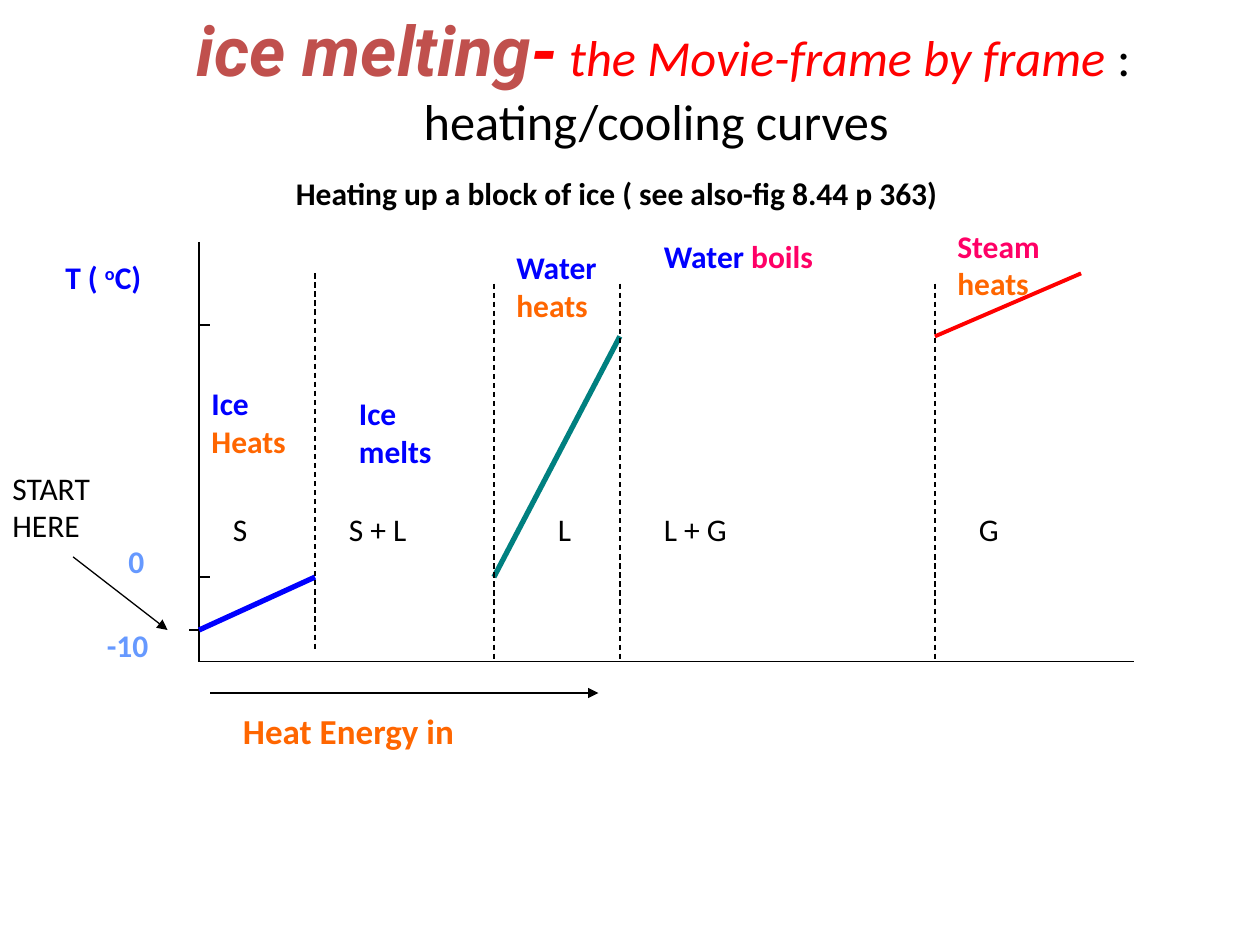
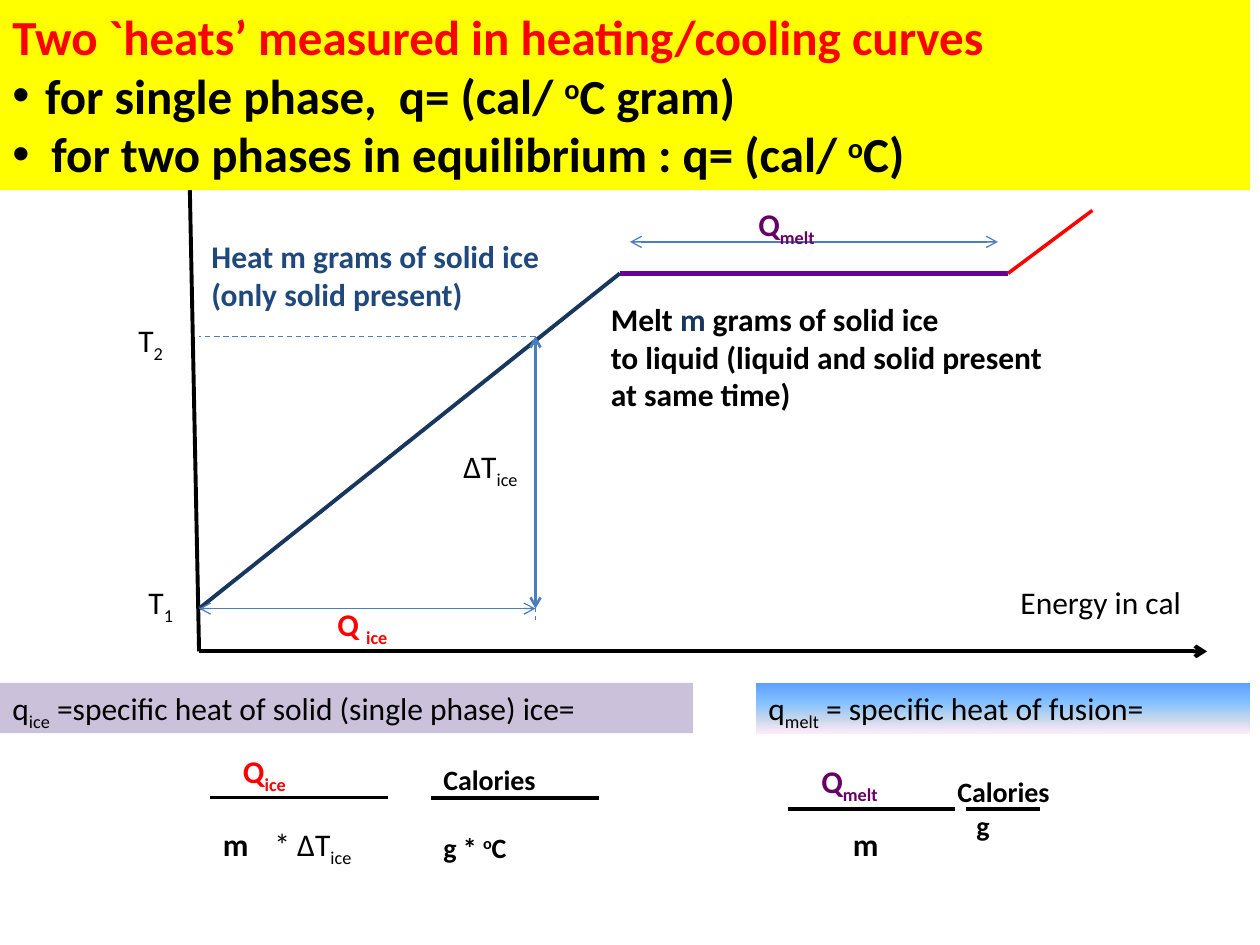
"""Build two slides on the heating curve of ice and its heats."""
from dataclasses import dataclass
from typing import Any

import lxml.etree
import pptx
import pptx.dml.color
import pptx.enum.dml
import pptx.enum.shapes
import pptx.enum.text
import pptx.oxml.ns
import pptx.util

HUES = {
    "black": "000000", "white": "FFFFFF", "red": "FF0000", "brick": "C0504D",
    "blue": "0000FF", "teal": "008080", "orange": "FF6600", "pink": "FF0066",
    "sky": "6699FF", "navy": "17375E", "ink": "1F497D", "steel": "4B7EBC",
    "violet": "660099", "plum": "660066", "yellow": "FFFF00", "lilac": "CCC1DA",
}
FADE = ((0, "5E9EFF"), (40, "85C2FF"), (70, "C4D6EB"), (100, "FFEBFA"))
SHIFT = {"_": -25, "^": 30}

Box = tuple[float, float, float, float]
Row = str | list[tuple[str, str]]


@dataclass(frozen=True)
class Label:
    """Text at a spot; a bar splits runs, _ lowers one and ^ lifts one."""
    box: Box
    rows: list[Row]
    hue: str = "black"
    bold: bool = False
    size: float = 18


@dataclass(frozen=True)
class Line:
    """A straight line with optional dash and arrow ends."""
    start: tuple[float, float]
    end: tuple[float, float]
    hue: str = "black"
    width: float = 0.75
    dash: bool = False
    head: str = ""
    tail: str = ""


@dataclass(frozen=True)
class Band:
    """A filled bar with rows of text."""
    box: Box
    fill: str
    rows: list[Row]


def tint(hue: str) -> pptx.dml.color.RGBColor:
    """Give the colour that a name stands for."""
    return pptx.dml.color.RGBColor.from_string(HUES[hue])


def node(root: Any, tag: str, **attrs: str) -> Any:
    """Add a drawing element below root."""
    return lxml.etree.SubElement(root, pptx.oxml.ns.qn(tag), **attrs)


def place(box: Box) -> list[int]:
    """Turn inches into lengths."""
    return [pptx.util.Inches(side) for side in box]


def write(para: Any, text: str, *, size: float = 18, hue: str = "black",
          bold: bool = False, slant: bool = False, font: str = "Calibri") -> None:
    """Add text to a paragraph, with its raised and lowered parts."""
    for piece in text.split("|"):
        base = SHIFT.get(piece[:1], 0)
        run = para.add_run()
        run.text = piece[1:] if base else piece
        run.font.name = font
        run.font.size = pptx.util.Pt(size)
        run.font.bold = bold
        run.font.italic = slant
        run.font.color.rgb = tint(hue)
        if base:
            run.font._element.set("baseline", str(base * 1000))


def fill_rows(frame: Any, rows: list[Row], hue: str = "black",
              bold: bool = False, size: float = 18) -> None:
    """Write one paragraph for each row."""
    frame.word_wrap = True
    for spot, row in enumerate(rows):
        para = frame.add_paragraph() if spot else frame.paragraphs[0]
        para.alignment = pptx.enum.text.PP_ALIGN.LEFT
        for text, shade in [(row, hue)] if isinstance(row, str) else row:
            write(para, text, hue=shade, bold=bold, size=size)


def add_label(slide: Any, item: Label) -> None:
    """Draw a text label."""
    frame = slide.shapes.add_textbox(*place(item.box)).text_frame
    fill_rows(frame, item.rows, item.hue, item.bold, item.size)


def add_line(slide: Any, item: Line) -> None:
    """Draw a line or arrow."""
    link = slide.shapes.add_connector(
        pptx.enum.shapes.MSO_CONNECTOR.STRAIGHT, *place(item.start + item.end))
    link.line.color.rgb = tint(item.hue)
    link.line.width = pptx.util.Pt(item.width)
    if item.dash:
        link.line.dash_style = pptx.enum.dml.MSO_LINE.DASH
    props = link._element.spPr
    stroke = props.find(pptx.oxml.ns.qn("a:ln"))
    for tag, kind in (("a:headEnd", item.head), ("a:tailEnd", item.tail)):
        if kind:
            node(stroke, tag, type=kind)
    node(props, "a:effectLst")


def add_band(slide: Any, item: Band) -> Any:
    """Draw a bar and give back its shape."""
    shape = slide.shapes.add_shape(
        pptx.enum.shapes.MSO_SHAPE.RECTANGLE, *place(item.box))
    shape.shadow.inherit = False
    shape.line.fill.background()
    if item.fill == "fade":
        shape.fill.gradient()
        shape.fill.gradient_angle = 270
        stops = shape._element.spPr.find(".//" + pptx.oxml.ns.qn("a:gsLst"))
        for old in list(stops):
            stops.remove(old)
        for part, code in FADE:
            stop = node(stops, "a:gs", pos=str(part * 1000))
            node(stop, "a:srgbClr", val=code)
    else:
        shape.fill.solid()
        shape.fill.fore_color.rgb = tint(item.fill)
    shape.text_frame.vertical_anchor = pptx.enum.text.MSO_ANCHOR.TOP
    fill_rows(shape.text_frame, item.rows)
    return shape


def dot(para: Any, gap: float) -> None:
    """Put a small bullet before a paragraph."""
    props = para._p.get_or_add_pPr()
    room = pptx.util.Inches(gap)
    props.set("marL", str(room))
    props.set("indent", str(-room))
    node(props, "a:buSzPts", val="1800")
    node(props, "a:buFont", typeface="Arial")
    node(props, "a:buChar", char="•")


def add_page(deck: Any, lines: list[Line], bands: list[Band],
             labels: list[Label]) -> Any:
    """Add a white slide with lines, bands and labels in that order."""
    slide = deck.slides.add_slide(deck.slide_layouts[6])
    slide.background.fill.solid()
    slide.background.fill.fore_color.rgb = tint("white")
    for line in lines:
        add_line(slide, line)
    for band in bands:
        add_band(slide, band)
    for label in labels:
        add_label(slide, label)
    return slide


def add_curve(deck: Any) -> None:
    """Build the slide with the heating curve."""
    left, floor, ice, boil = 1.58, 5.25, 4.58, 2.67
    lines = [
        Line((left, 1.92), (left, floor)),
        Line((left, floor), (9, floor)),
        Line((left, 5), (2.5, ice), "blue", 3),
        Line((3.92, ice), (4.92, boil), "teal", 3),
        Line((7.42, boil), (8.58, 2.17), "red", 2.25),
        Line((1.67, 5.5), (4.75, 5.5), tail="triangle"),
        Line((0.58, 4.42), (1.33, 5), tail="triangle"),
        Line((left, 5), (1.5, 5)),
        Line((2.5, 2.17), (2.5, 5.17), dash=True),
    ]
    lines += [Line((left, y), (1.67, y)) for y in (ice, 2.58)]
    lines += [Line((x, 2.25), (x, floor), dash=True) for x in (3.92, 4.92, 7.42)]
    labels = [
        Label((0.42, 2, 1.08, 0.4), ["T ( |^o|C)"], "blue", True),
        Label((1.83, 5.58, 3.25, 0.43), ["Heat Energy in"], "orange", True, 20),
        Label((0.75, 4.92, 0.67, 0.4), ["-10"], "sky", True),
        Label((0.92, 4.25, 0.58, 0.4), ["0"], "sky", True),
        Label((2.25, 1.33, 6.33, 0.4),
              ["Heating up a block of ice ( see also-fig 8.44 p 363)"], bold=True),
        Label((0, 3.67, 1.08, 0.7), ["START", "HERE"]),
        Label((1.58, 3, 1, 0.7), ["Ice", [("Heats", "orange")]], "blue", True),
        Label((2.75, 3.08, 1.08, 0.7), ["Ice melts"], "blue", True),
        Label((4, 1.92, 1.17, 0.7),
              [[("Water ", "blue"), ("heats", "orange")]], bold=True),
        Label((5.17, 1.83, 1.75, 0.4),
              [[("Water ", "blue"), ("boils", "pink")]], bold=True),
        Label((7.5, 1.75, 1.33, 0.7),
              [[("Steam ", "pink"), ("heats", "orange")]], bold=True),
    ]
    phases = ((1.75, "S"), (2.67, "S + L"), (4.33, "L"), (5.17, "L + G"), (7.67, "G"))
    labels += [Label((x, 4, 1, 0.4), [name]) for x, name in phases]
    slide = add_page(deck, lines, [], labels)

    frame = slide.shapes.add_textbox(*place((0.42, 0, 9.58, 1.25))).text_frame
    frame.word_wrap = True
    frame.vertical_anchor = pptx.enum.text.MSO_ANCHOR.MIDDLE
    title = frame.paragraphs[0]
    title.alignment = pptx.enum.text.PP_ALIGN.CENTER
    loud = {"font": "Roboto", "bold": True, "slant": True}
    write(title, " ", size=32.4, hue="brick", **loud)
    write(title, "ice melting", size=39.6, hue="brick", **loud)
    write(title, "-", size=39.6, hue="red", **loud)
    write(title, " the Movie-frame by frame ", size=28.8, hue="red", slant=True)
    write(title, ": heating/cooling curves", size=28.8)


def add_heats(deck: Any) -> None:
    """Build the slide with the two measured heats."""
    left, floor, low, high, mid, top = 1.58, 5.17, 4.83, 2.67, 4.25, 2.17
    both = {"head": "arrow", "tail": "arrow"}
    lines = [
        Line((1.5, 1.17), (left, floor), width=2.25),
        Line((left, floor), (9.58, floor), width=2.25, tail="arrow"),
        Line((left, low), (4.92, top), "navy", 2.25),
        Line((mid, high), (mid, 4.92), "steel", dash=True),
        Line((mid, high), (left, high), "steel", dash=True),
        Line((mid, low), (left, low), "steel", **both),
        Line((mid, high), (mid, low), "steel", 1.5, **both),
        Line((4.92, top), (8, top), "violet", 2.75),
        Line((5, 1.92), (7.92, 1.92), "steel", **both),
        Line((8, top), (8.67, 1.67), "red", 2),
        Line((1.67, 6.33), (3.08, 6.33), width=1.75),
    ]
    bars = ((3.42, 4.75, 6.33), (6.25, 7.58, 6.42), (7.67, 8.25, 6.42))
    lines += [Line((a, y), (b, y), width=2.25) for a, b, y in bars]
    bands = [
        Band((0, 5.42, 5.5, 0.4), "lilac",
             ["q|_ice| =specific heat of solid (single phase) ice="]),
        Band((6, 5.42, 3.92, 0.4), "fade", ["q|_melt| = specific heat of fusion="]),
    ]
    labels = [
        Label((1.08, 4.58, 0.67, 0.4), ["T|_1"]),
        Label((1, 2.5, 0.67, 0.4), ["T|_2"]),
        Label((left, 1.83, 3.08, 0.71),
              ["Heat m grams of solid ice (only solid present)"], "ink", True),
        Label((2.58, 4.75, 0.83, 0.4), ["Q |_ice"], "red", True),
        Label((8, 4.58, 1.75, 0.4), ["Energy in cal"]),
        Label((3.58, 3.5, 0.75, 0.4), ["ΔT|_ice"]),
        Label((1.83, 5.92, 1.17, 0.4), ["Q|_ice"], "red", True),
        Label((1.67, 6.5, 0.42, 0.4), ["m"], bold=True),
        Label((2.08, 6.5, 1.08, 0.4), ["* ΔT|_ice"]),
        Label((3.42, 6, 1.33, 0.37), ["Calories"], bold=True, size=16),
        Label((3.42, 6.54, 1.33, 0.37), ["g * |^o|C"], bold=True, size=16),
        Label((4.75, 2.33, 4.24, 1.01),
              [[("Melt ", "black"), ("m", "navy"), (" grams of solid ice", "black")],
               "to liquid (liquid and solid present", "at same time)"], bold=True),
        Label((5.92, 1.58, 0.83, 0.4), ["Q|_melt"], "plum", True),
        Label((6.42, 6, 0.83, 0.4), ["Q|_melt"], "plum", True),
        Label((6.67, 6.5, 0.5, 0.4), ["m"], bold=True),
        Label((7.5, 6.1, 1.5, 0.37), ["Calories"], bold=True, size=16),
        Label((7.65, 6.37, 0.5, 0.37), ["g"], bold=True, size=16),
    ]
    slide = add_page(deck, lines, bands, labels)

    banner = add_band(slide, Band((0, 0, 9.92, 1.51), "yellow", []))
    frame = banner.text_frame
    bold = {"size": 28, "bold": True}
    head = frame.paragraphs[0]
    head.alignment = pptx.enum.text.PP_ALIGN.LEFT
    write(head, "Two `heats’ measured in heating/cooling curves", hue="red", **bold)
    for text, gap in (("for single phase,  q= (cal/ |^o|C gram)", 0.26),
                      ("for two phases in equilibrium : q= (cal/ |^o|C)", 0.31)):
        para = frame.add_paragraph()
        para.alignment = pptx.enum.text.PP_ALIGN.LEFT
        dot(para, gap)
        write(para, text, **bold)


def main() -> None:
    """Build and save the deck."""
    deck = pptx.Presentation()
    deck.slide_width = pptx.util.Inches(10)
    deck.slide_height = pptx.util.Inches(7.5)
    add_curve(deck)
    add_heats(deck)
    deck.save("out.pptx")


if __name__ == "__main__":
    main()
